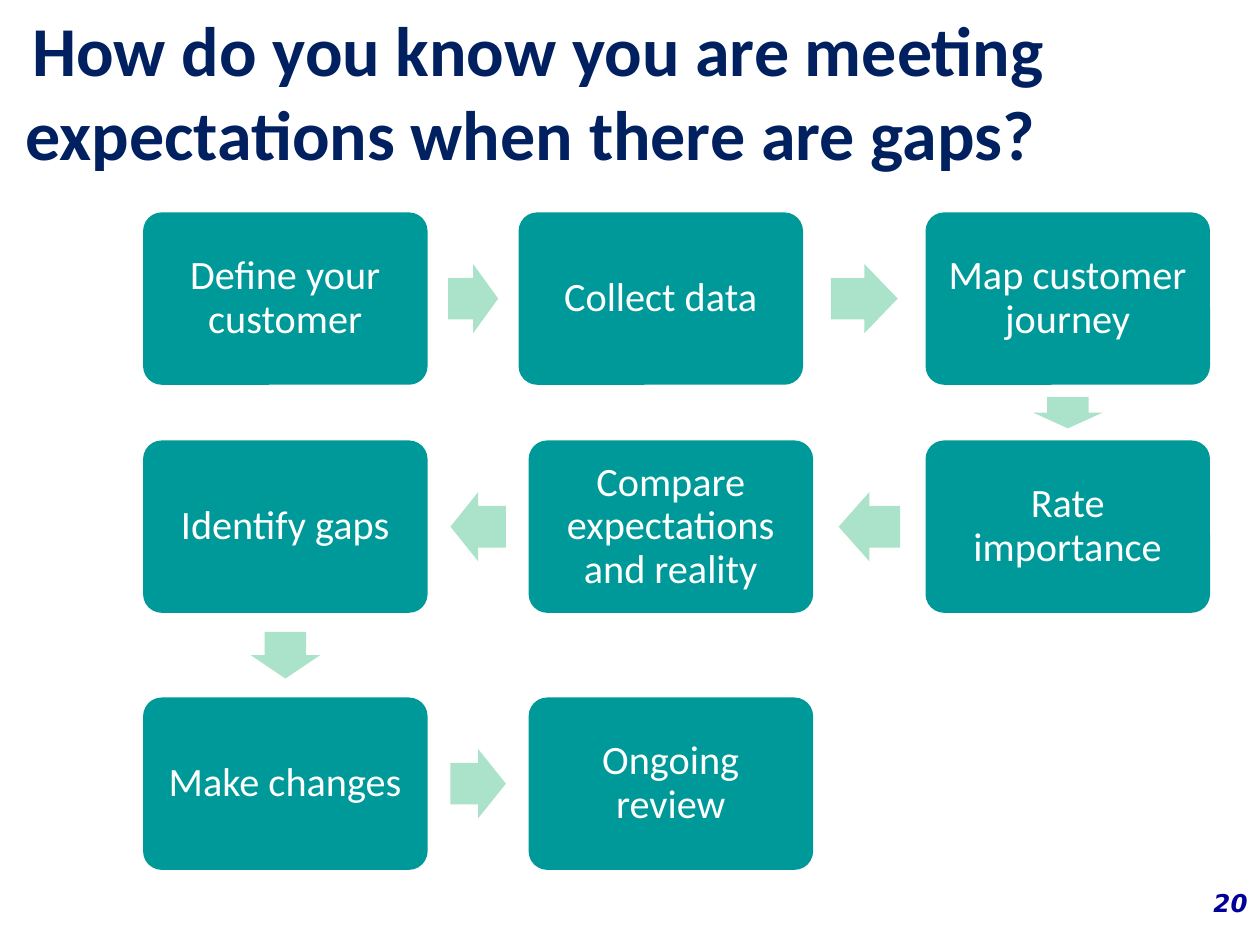
from dataclasses import dataclass
from itertools import pairwise

from pptx import Presentation
from pptx.dml.color import RGBColor
from pptx.enum.shapes import MSO_SHAPE
from pptx.enum.text import MSO_ANCHOR, PP_ALIGN
from pptx.util import Inches, Pt

ROUNDED = MSO_SHAPE.ROUNDED_RECTANGLE
ARROW = MSO_SHAPE.RIGHT_ARROW
MIDDLE, TOP = MSO_ANCHOR.MIDDLE, MSO_ANCHOR.TOP
CENTER, RIGHT = PP_ALIGN.CENTER, PP_ALIGN.RIGHT

COLORS = {"title": "002060", "step": "009999", "arrow": "ABE2CA",
          "step_text": "FFFFFF", "number": "000099"}
WIDTH, HEIGHT = 10, 7.5
COLUMNS = (1.15, 4.21, 7.36)
ROWS = (1.70, 3.51, 5.55)
STEP_WIDTH, STEP_HEIGHT = 2.23, 1.34
ARROW_SHARE, ARROW_BREADTH = 0.53, 0.55

STEPS = [
    ("Define your customer", 0, 0, 0),
    ("Collect data", 1, 0, -0.08),
    ("Map customer journey", 2, 0, 0),
    ("Rate importance", 2, 1, 0),
    ("Compare expectations and reality", 1, 1, 0),
    ("Identify gaps", 0, 1, 0),
    ("Make changes", 0, 2, 0),
    ("Ongoing review", 1, 2, 0),
]


@dataclass
class FlowSlide:
    """Draws the parts of a step flow on one slide in a shared style."""
    slide: object
    font: str = "Calibri"

    def place(self, shape, left, top, width, height):
        shape.left, shape.top = Inches(left), Inches(top)
        shape.width, shape.height = Inches(width), Inches(height)

    def add_text(self, frame, text, size, color, align=CENTER, anchor=MIDDLE,
                 font=None, bold=False, italic=False, spacing=1.0):
        frame.word_wrap = True
        frame.vertical_anchor = anchor
        paragraph = frame.paragraphs[0]
        paragraph.alignment = align
        paragraph.line_spacing = spacing
        paragraph.space_before = Pt(0)
        run = paragraph.add_run()
        run.text = text
        run.font.name = font or self.font
        run.font.size = Pt(size)
        run.font.bold, run.font.italic = bold, italic
        run.font.color.rgb = RGBColor.from_string(COLORS[color])

    def title(self, text):
        heading = self.slide.shapes.title
        self.place(heading, 0, 0.21, 8.54, 1.02)
        self.add_text(heading.text_frame, text, 40, "title", bold=True)

    def number(self, text):
        box = self.slide.shapes.add_textbox(0, 0, 0, 0)
        self.place(box, WIDTH - 0.59, HEIGHT - 0.5, 0.59, 0.5)
        self.add_text(box.text_frame, text, 14, "number", RIGHT, TOP,
                      "DejaVu Sans", bold=True, italic=True)

    def block(self, kind, color, left, top, width, height):
        shape = self.slide.shapes.add_shape(
            kind, *(Inches(length) for length in (left, top, width, height)))
        shape.shadow.inherit = False
        shape.fill.solid()
        shape.fill.fore_color.rgb = RGBColor.from_string(COLORS[color])
        shape.line.fill.background()
        return shape

    def step(self, text, column, row, shift):
        """Draws one step in its grid cell and returns its left and top."""
        left, top = COLUMNS[column] + shift, ROWS[row]
        step = self.block(ROUNDED, "step", left, top, STEP_WIDTH, STEP_HEIGHT)
        step.adjustments[0] = 0.1
        step.line.color.rgb = RGBColor.from_string(COLORS["step"])
        step.line.width = Pt(2)
        frame = step.text_frame
        frame.margin_left = frame.margin_right = Inches(0.1)
        frame.margin_top = frame.margin_bottom = Inches(0.1)
        self.add_text(frame, text, 23, "step_text", spacing=0.9)
        return left, top

    def arrow(self, start, end):
        """Centres an arrow in the gap between two neighbouring steps."""
        across, down = end[0] - start[0], end[1] - start[1]
        if down:
            gap, turn = down - STEP_HEIGHT, 90
        else:
            gap, turn = abs(across) - STEP_WIDTH, 0 if across > 0 else 180
        length = gap * ARROW_SHARE
        left = (start[0] + end[0] + STEP_WIDTH - length) / 2
        top = (start[1] + end[1] + STEP_HEIGHT - ARROW_BREADTH) / 2
        arrow = self.block(ARROW, "arrow", left, top, length, ARROW_BREADTH)
        arrow.adjustments[0], arrow.adjustments[1] = 0.6, 0.5
        arrow.rotation = turn


def main():
    deck = Presentation()
    deck.slide_width, deck.slide_height = Inches(WIDTH), Inches(HEIGHT)
    flow = FlowSlide(deck.slides.add_slide(deck.slide_layouts[5]))
    flow.title("How do you know you are meeting expectations when there are gaps? ")
    corners = [flow.step(*step) for step in STEPS]
    for start, end in pairwise(corners):
        flow.arrow(start, end)
    flow.number("20")
    deck.save("out.pptx")


if __name__ == "__main__":
    main()
